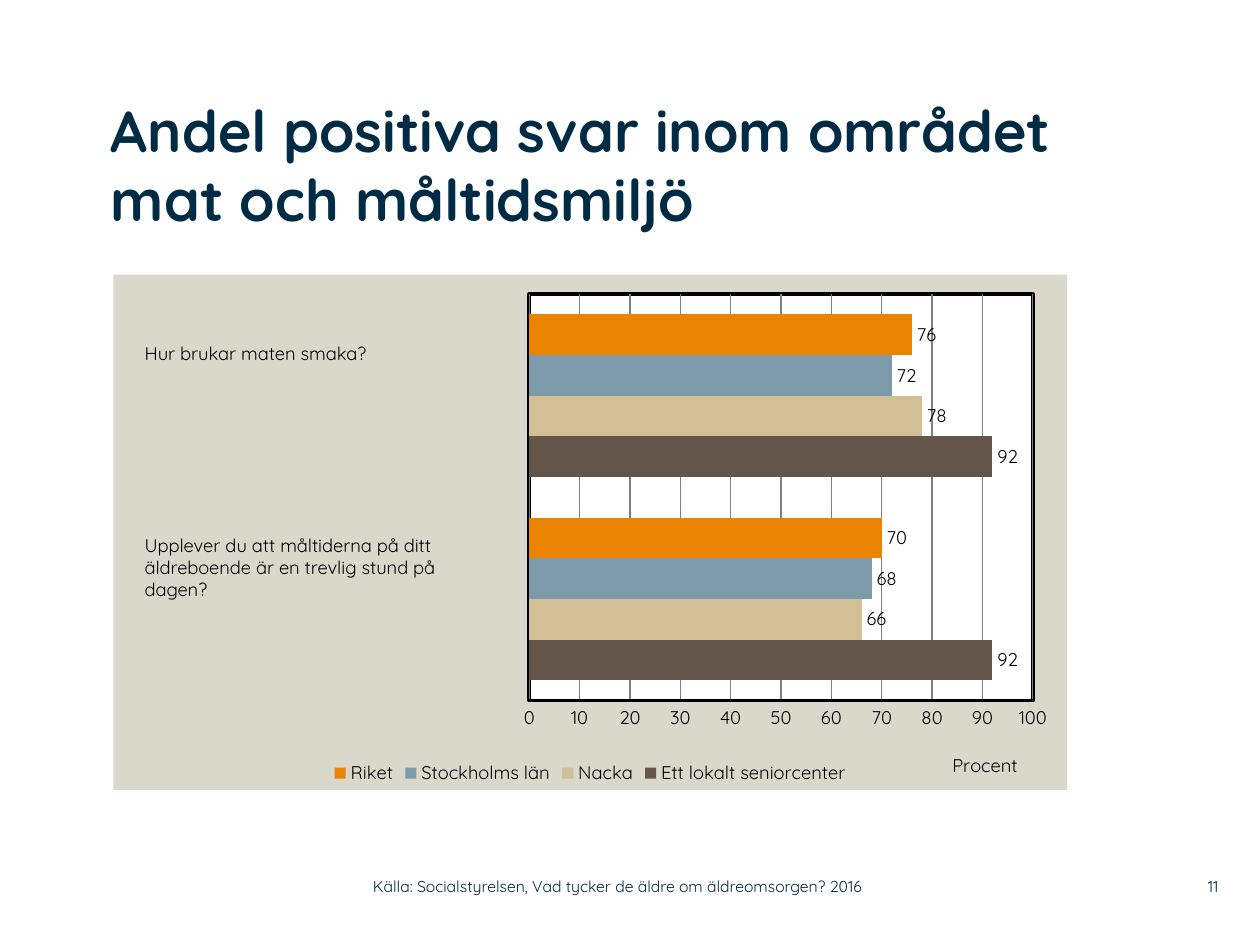
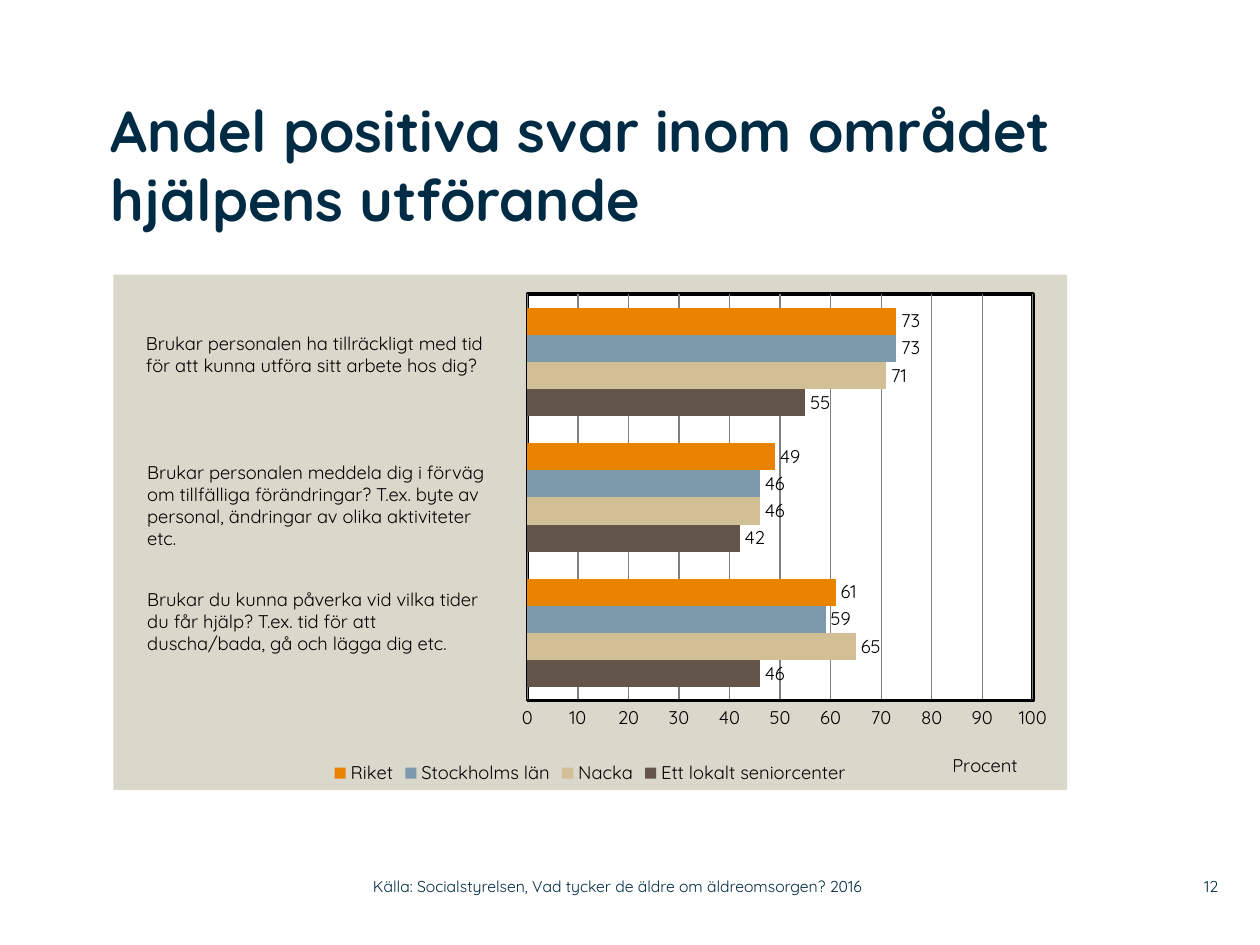
from dataclasses import dataclass

from lxml import etree
from pptx import Presentation
from pptx.chart.data import CategoryChartData
from pptx.dml.color import RGBColor
from pptx.enum.chart import XL_CHART_TYPE, XL_LABEL_POSITION, XL_LEGEND_POSITION, XL_TICK_MARK
from pptx.enum.text import MSO_ANCHOR, PP_ALIGN
from pptx.oxml import parse_xml
from pptx.oxml.ns import nsdecls, qn
from pptx.util import Inches, Pt

BAR = XL_CHART_TYPE.BAR_CLUSTERED
OUTSIDE = XL_LABEL_POSITION.OUTSIDE_END
BOTTOM = XL_LEGEND_POSITION.BOTTOM
NO_TICK = XL_TICK_MARK.NONE
TOP, MIDDLE = MSO_ANCHOR.TOP, MSO_ANCHOR.MIDDLE
LEFT, RIGHT = PP_ALIGN.LEFT, PP_ALIGN.RIGHT


@dataclass(frozen=True)
class Theme:
    font: str = "Quicksand"
    navy: str = "002B45"
    black: str = "000000"
    white: str = "FFFFFF"
    panel: str = "DAD7CB"
    grid: str = "808080"
    title_size: float = 33
    body_size: float = 10.5
    footer_size: float = 9
    frame_width: float = 2
    grid_width: float = 0.75


THEME = Theme()
SERIES_COLORS = {
    "Ett lokalt seniorcenter": "635549",
    "Nacka": "D3BF96",
    "Stockholms län": "7D9AAA",
    "Riket": "E98300",
}
SOURCE = "Källa: Socialstyrelsen, Vad tycker de äldre om äldreomsorgen? 2016"
CHART_AREA = (0.9, 2.18, 7.57, 4.09)
SOURCE_AREA = (2.96, 6.89, 4.43, 0.29)
NUMBER_AREA = (9.2, 6.89, 0.47, 0.29)

SLIDES = [
    {
        "number": 11,
        "title": "Andel positiva svar inom området mat och måltidsmiljö",
        "title_width": 8.42,
        "plot": (0.436, 0.038, 0.528, 0.789),
        "values": [(92, 92), (66, 78), (68, 72), (70, 76)],
        "questions": [
            ((1.05, 2.67, 2.97, 0.28), ["Hur brukar maten smaka?"]),
            ((1.05, 4.19, 2.93, 0.63), [
                "Upplever du att måltiderna på ditt äldreboende är en trevlig stund på",
                "dagen?",
            ]),
        ],
    },
    {
        "number": 12,
        "title": "Andel positiva svar inom området hjälpens utförande",
        "title_width": 7.6,
        "plot": (0.434, 0.038, 0.53, 0.789),
        "values": [(46, 42, 55), (65, 46, 71), (59, 46, 73), (61, 49, 73)],
        "questions": [
            ((1.06, 2.59, 2.99, 0.45), [
                "Brukar personalen ha tillräckligt med tid",
                "för att kunna utföra sitt arbete hos dig?",
            ]),
            ((1.07, 3.61, 2.97, 0.81), [
                "Brukar personalen meddela dig i förväg om tillfälliga förändringar? "
                "T.ex. byte av personal, ändringar av olika aktiviteter etc.",
            ]),
            ((1.07, 4.62, 2.97, 0.63), [
                "Brukar du kunna påverka vid vilka tider",
                "du får hjälp? T.ex. tid för att",
                "duscha/bada, gå och lägga dig etc.",
            ]),
        ],
    },
]


def set_font(font, size=THEME.body_size, color=THEME.black, bold=False):
    for name, value in {"name": THEME.font, "size": Pt(size), "bold": bold}.items():
        setattr(font, name, value)
    font.color.rgb = RGBColor.from_string(color)


def add_text(page, area, lines, align=LEFT, anchor=TOP, inset=True, **style):
    box = page.shapes.add_textbox(*map(Inches, area))
    frame = box.text_frame
    frame.word_wrap = True
    frame.vertical_anchor = anchor
    if not inset:
        for side in ("left", "top", "right", "bottom"):
            setattr(frame, f"margin_{side}", 0)
    for index, line in enumerate(lines):
        para = frame.add_paragraph() if index else frame.paragraphs[0]
        para.alignment = align
        span = para.add_run()
        span.text = line
        set_font(span.font, **style)


def set_layout(parent, position, **values):
    layout = parent.find(qn("c:layout"))
    if layout is None:
        layout = parse_xml(f"<c:layout {nsdecls('c')}/>")
        parent.insert(0, layout)
    manual = etree.SubElement(layout, qn("c:manualLayout"))
    settings = dict(values, xMode="edge", yMode="edge", **dict(zip("xywh", position)))
    for name in ("layoutTarget", "xMode", "yMode", "x", "y", "w", "h"):
        if name in settings:
            etree.SubElement(manual, qn(f"c:{name}")).set("val", str(settings[name]))


def area_format(fill, line=None):
    if line:
        paint = f'<a:solidFill><a:srgbClr val="{line}"/></a:solidFill>'
    else:
        paint = "<a:noFill/>"
    return parse_xml(
        f'<c:spPr {nsdecls("c", "a")}><a:solidFill><a:srgbClr val="{fill}"/></a:solidFill>'
        f'<a:ln w="{Pt(THEME.frame_width)}">{paint}</a:ln></c:spPr>'
    )


def style_line(line, color, width):
    line.color.rgb = RGBColor.from_string(color)
    line.width = Pt(width)


def style_value_axis(axis):
    settings = {
        "minimum_scale": 0, "maximum_scale": 100, "major_unit": 10,
        "major_tick_mark": NO_TICK, "minor_tick_mark": NO_TICK,
        "has_major_gridlines": True, "has_title": True,
    }
    for name, value in settings.items():
        setattr(axis, name, value)
    style_line(axis.format.line, THEME.black, THEME.frame_width)
    style_line(axis.major_gridlines.format.line, THEME.grid, THEME.grid_width)
    set_font(axis.tick_labels.font)
    title = axis.axis_title
    span = title.text_frame.paragraphs[0].add_run()
    span.text = "Procent"
    set_font(span.font)
    title_element = axis.axis_title.format and axis._element.find(qn("c:title"))
    set_layout(title_element, (0.876, 0.92))


def add_bar_chart(page, plot_position, values):
    data = CategoryChartData()
    data.categories = [str(index + 1) for index in range(len(values[0]))]
    for name, numbers in zip(SERIES_COLORS, values):
        data.add_series(name, numbers)
    chart = page.shapes.add_chart(BAR, *map(Inches, CHART_AREA), data).chart
    set_font(chart.font)
    chart.has_title = False
    chart.has_legend = True
    chart.legend.position = BOTTOM
    chart.legend.include_in_layout = False
    set_font(chart.legend.font)
    chart.category_axis.visible = False
    style_value_axis(chart.value_axis)

    plot = chart.plots[0]
    for name, value in {"gap_width": 100, "overlap": 0, "vary_by_categories": False}.items():
        setattr(plot, name, value)
    for series in plot.series:
        series.format.fill.solid()
        series.format.fill.fore_color.rgb = RGBColor.from_string(SERIES_COLORS[series.name])
        labels = series.data_labels
        labels.show_value = True
        labels.position = OUTSIDE
        set_font(labels.font)

    chart_element = chart.element.find(qn("c:chart"))
    chart_element.addnext(area_format(THEME.panel))
    plot_area = chart_element.find(qn("c:plotArea"))
    set_layout(plot_area, plot_position, layoutTarget="inner")
    plot_area.append(area_format(THEME.white, THEME.black))


def build_page(deck, content):
    page = deck.slides.add_slide(deck.slide_layouts[6])
    add_bar_chart(page, content["plot"], content["values"])
    add_text(page, (0.88, 0.75, content["title_width"], 1.42), [content["title"]],
             inset=False, size=THEME.title_size, color=THEME.navy, bold=True)
    for area, lines in content["questions"]:
        add_text(page, area, lines)
    footer = {"anchor": MIDDLE, "inset": False, "size": THEME.footer_size, "color": THEME.navy}
    add_text(page, NUMBER_AREA, [str(content["number"])], align=RIGHT, **footer)
    add_text(page, SOURCE_AREA, [SOURCE], **footer)


def main():
    deck = Presentation()
    deck.slide_width, deck.slide_height = Inches(10), Inches(7.5)
    for content in SLIDES:
        build_page(deck, content)
    deck.save("out.pptx")


if __name__ == "__main__":
    main()
